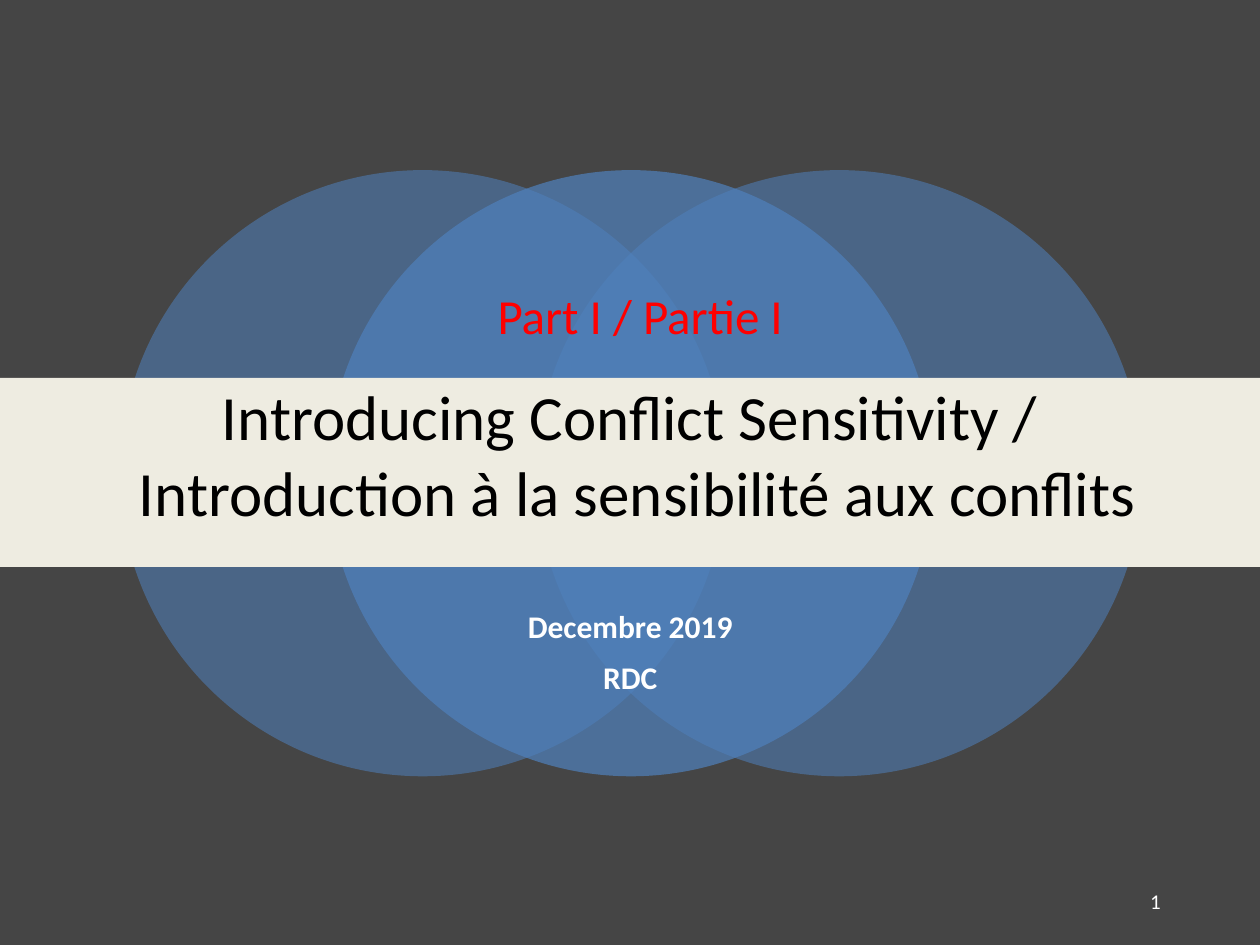
"""Build the opening slide of a bilingual conflict sensitivity course."""
from lxml import etree
from pptx import Presentation
from pptx.dml.color import RGBColor
from pptx.enum.shapes import MSO_SHAPE
from pptx.enum.text import MSO_ANCHOR, MSO_AUTO_SIZE, PP_ALIGN
from pptx.oxml.ns import qn
from pptx.util import Cm, Pt

OVAL, RECTANGLE = MSO_SHAPE.OVAL, MSO_SHAPE.RECTANGLE
TOP, MIDDLE, BOTTOM = MSO_ANCHOR.TOP, MSO_ANCHOR.MIDDLE, MSO_ANCHOR.BOTTOM
LEFT, CENTER, RIGHT = PP_ALIGN.LEFT, PP_ALIGN.CENTER, PP_ALIGN.RIGHT
FIXED = MSO_AUTO_SIZE.NONE
WIDTH, HEIGHT = 25.4, 19.05


def color(value):
    return RGBColor.from_string(value)


def assign(target, values):
    for name, value in values.items():
        setattr(target, name, value)


class SlideBuilder:
    font = "Calibri"
    background = "454545"
    circle = "4F81BD"
    band = "EEECE1"
    white = "FFFFFF"
    red = "FF0000"
    black = "000000"

    def __init__(self, page):
        self.page = page
        fill = page.background.fill
        fill.solid()
        fill.fore_color.rgb = color(self.background)

    def shape(self, kind, left, top, width, height, fill, opacity=100):
        shape = self.page.shapes.add_shape(
            kind, Cm(left), Cm(top), Cm(width), Cm(height))
        shape.shadow.inherit = False
        shape.line.fill.background()
        shape.fill.solid()
        shape.fill.fore_color.rgb = color(fill)
        if opacity < 100:
            tone = shape.fill._xPr.find(qn("a:solidFill"))[0]
            etree.SubElement(tone, qn("a:alpha"), val=str(opacity * 1000))

    def fill_text(self, box, lines, size, tint, anchor=TOP, bold=False,
                  **layout):
        frame = box.text_frame
        frame.text = "\n".join(lines)
        assign(frame, {"word_wrap": True, "auto_size": FIXED,
                       "vertical_anchor": anchor})
        for para in frame.paragraphs:
            assign(para, layout)
            for span in para.runs:
                assign(span.font, {"name": self.font, "size": Pt(size),
                                   "bold": bold})
                span.font.color.rgb = color(tint)

    def text(self, left, top, width, height, lines, size, tint, **style):
        box = self.page.shapes.add_textbox(
            Cm(left), Cm(top), Cm(width), Cm(height))
        self.fill_text(box, lines, size, tint, **style)

    def placeholder(self, index, left, top, width, height, lines, size, tint,
                    **style):
        box = self.page.placeholders[index]
        assign(box, {"left": Cm(left), "top": Cm(top),
                     "width": Cm(width), "height": Cm(height)})
        self.fill_text(box, lines, size, tint, **style)
        box._element.getparent().append(box._element)


def main():
    deck = Presentation()
    deck.slide_width, deck.slide_height = Cm(WIDTH), Cm(HEIGHT)
    slide = SlideBuilder(deck.slides.add_slide(deck.slide_layouts[0]))

    for step, opacity in ((0, 55), (2, 55), (1, 70)):
        slide.shape(OVAL, 2.41 + 4.2 * step, 3.43, 12.22, 12.22,
                    slide.circle, opacity)
    slide.placeholder(1, 3.18, 11.73, 19.05, 2.44, ["Decembre 2019", "RDC"],
                      18, slide.white, anchor=BOTTOM, bold=True,
                      alignment=CENTER, line_spacing=0.9, space_before=Pt(10))
    slide.shape(RECTANGLE, 0, 7.62, WIDTH, 3.81, slide.band)
    slide.text(17.93, 17.65, 5.72, 1.02, ["1"], 12, slide.white,
               anchor=MIDDLE, alignment=RIGHT, space_after=Pt(6))
    slide.text(9.78, 5.64, 6.35, 1.45, ["Part I / Partie I"], 28, slide.red,
               alignment=LEFT)
    slide.placeholder(0, 0, 7.49, WIDTH, 4.11,
                      ["Introducing Conflict Sensitivity /",
                       " Introduction à la sensibilité aux conflits"],
                      36, slide.black, alignment=CENTER)
    deck.save("out.pptx")


if __name__ == "__main__":
    main()
